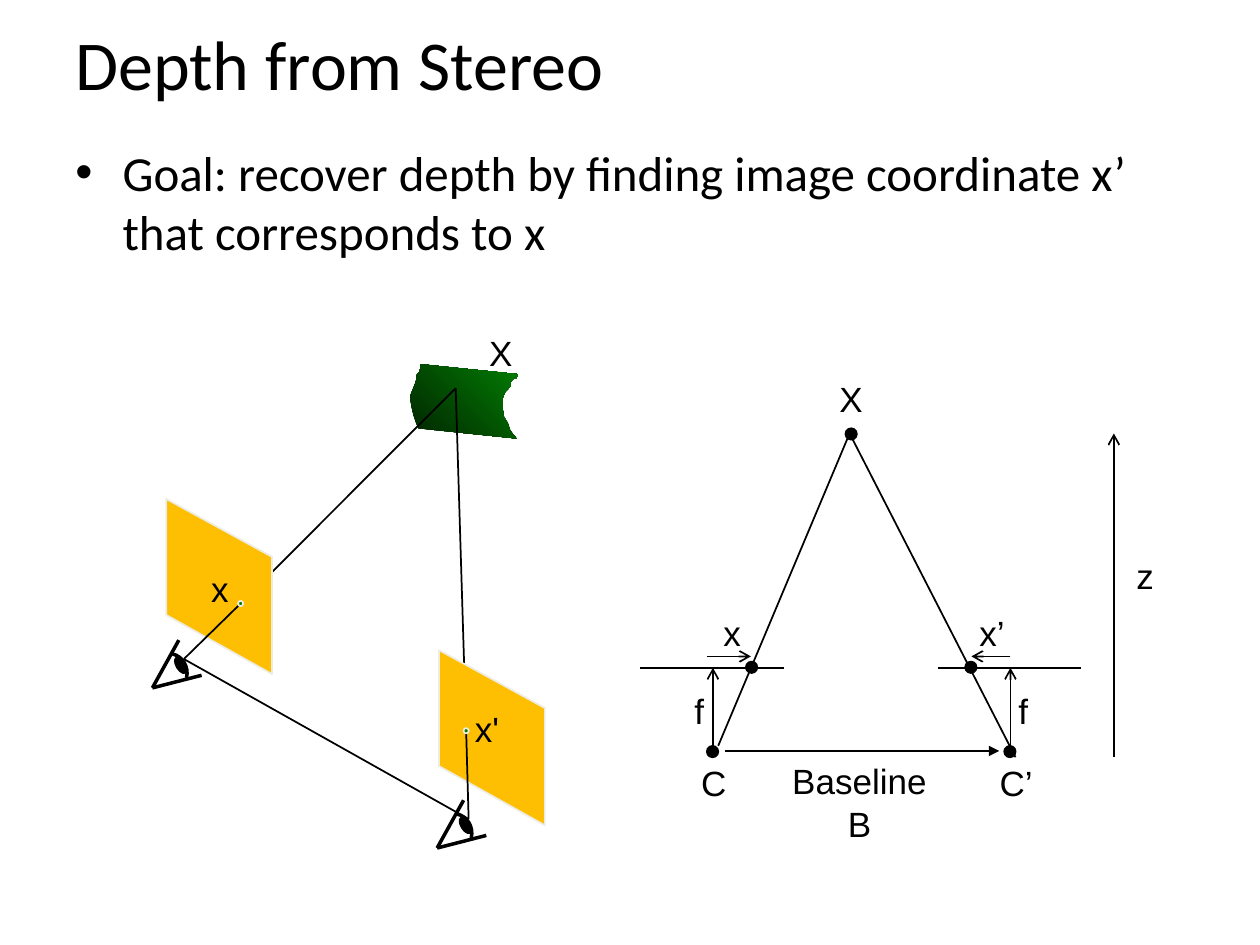
from lxml import etree
from pptx import Presentation
from pptx.dml.color import RGBColor
from pptx.enum.shapes import MSO_CONNECTOR, MSO_SHAPE
from pptx.enum.text import MSO_ANCHOR, PP_ALIGN
from pptx.oxml.ns import qn
from pptx.util import Pt

STRAIGHT = MSO_CONNECTOR.STRAIGHT
OVAL = MSO_SHAPE.OVAL
TOP, MIDDLE = MSO_ANCHOR.TOP, MSO_ANCHOR.MIDDLE
LEFT, CENTER = PP_ALIGN.LEFT, PP_ALIGN.CENTER
BLACK, YELLOW, GREEN, DARK_GREEN, CREAM = "000000", "FEBF02", "037C03", "012501", "EEECE1"


def write(shapes, text, left, top, width, height=31.7, size=20, font="Arial",
          align=CENTER, anchor=MIDDLE, wrap=False, bullet=None):
    box = shapes.add_textbox(Pt(left), Pt(top), Pt(width), Pt(height))
    frame = box.text_frame
    frame.word_wrap = wrap
    frame.vertical_anchor = anchor
    para = frame.paragraphs[0]
    para.text = text
    para.alignment = align
    for span in para.runs:
        span.font.size = Pt(size)
        span.font.name = font
        span.font.color.rgb = RGBColor.from_string(BLACK)
    if bullet:
        settings = para._p.get_or_add_pPr()
        settings.set("marL", str(Pt(27)))
        settings.set("indent", str(Pt(-27)))
        etree.SubElement(settings, qn("a:buFont"), typeface="Arial")
        etree.SubElement(settings, qn("a:buChar"), char=bullet)


def style(shape, fill=None, line=BLACK, width=1, arrow=None):
    if line:
        shape.line.color.rgb = RGBColor.from_string(line)
        shape.line.width = Pt(width)
    else:
        shape.line.fill.background()
    if arrow:
        etree.SubElement(shape.line._ln, qn("a:tailEnd"), type=arrow)
    if fill:
        shape.fill.solid()
        shape.fill.fore_color.rgb = RGBColor.from_string(fill)
    elif hasattr(shape, "fill"):
        shape.fill.background()
    etree.SubElement(shape._element.spPr, qn("a:effectLst"))


deck = Presentation()
deck.slide_width, deck.slide_height = Pt(720), Pt(540)
page = deck.slides.add_slide(deck.slide_layouts[6])

# Title and goal
write(page.shapes, "Depth from Stereo", 36, 0, 648, 72, size=40, font="Calibri",
      align=LEFT, wrap=True)
write(page.shapes, "Goal: recover depth by finding image coordinate x’ that corresponds to x",
      36, 77.8, 648, 404.6, size=28, font="Calibri", align=LEFT, anchor=TOP,
      wrap=True, bullet="•")

# Triangle diagram: lines and arrows
triangle = page.shapes.add_group_shape().shapes
triangle_lines = [
    (410.4, 426.2, 485.5, 247.7, None, 1),
    (580.3, 432.7, 485.5, 247.7, None, 1),
    (403.9, 375.1, 429.1, 375.1, "arrow", 1),
    (577.4, 375.1, 555.1, 375.1, "arrow", 1),
    (636.5, 432.7, 636.5, 247.7, "arrow", 1),
    (414, 429.1, 571, 429.1, "triangle", 1.5),
]
for camera_x in (407.4, 577.4):
    triangle_lines.append((camera_x - 41.6, 381.6, camera_x + 40.4, 381.6, None, 1))
    triangle_lines.append((camera_x, 426.2, camera_x, 381.6, "arrow", 1))
for x1, y1, x2, y2, arrow, width in triangle_lines:
    line = triangle.add_connector(STRAIGHT, Pt(x1), Pt(y1), Pt(x2), Pt(y2))
    style(line, width=width, arrow=arrow)

# Triangle diagram: points
for x, y in [(407.2, 429.5), (577.1, 429.5), (486.4, 248), (429.5, 381.3), (554.8, 381.3)]:
    dot = triangle.add_shape(OVAL, Pt(x - 3.25), Pt(y - 3.25), Pt(6.5), Pt(6.5))
    style(dot, fill=BLACK)

# Triangle diagram: labels
for text, left, top, width in [
    ("X", 454.3, 211.7, 64.1), ("x", 406.1, 345.6, 24.5), ("x’", 552.2, 345.6, 29.5),
    ("f", 389.5, 390.2, 20.2), ("f", 574.6, 390.2, 20.2), ("z", 642.2, 313.2, 24.5),
    ("C", 375.8, 431.3, 64.1), ("C’", 548.6, 431.3, 64.1),
]:
    write(triangle, text, left, top, width)
write(triangle, "Baseline\nB", 445, 430.6, 92.2, 55.4)

# Scene: curved green surface
scene = page.shapes.add_group_shape().shapes
surface_edge = [
    (240.5, 208.1), (239.8, 212.4), (238.3, 213.8), (237.6, 218.2), (236.2, 221.8),
    (234.7, 225.4), (234.7, 229.7), (235.4, 233.3), (236.2, 236.9), (237.6, 241.2),
    (239, 244.8), (295.2, 250.6), (291.6, 246.2), (290.2, 241.9), (288, 238.3),
    (287.3, 234), (287.3, 227.5), (288.7, 223.9), (291.6, 221), (291.6, 218.9),
    (293, 216.7), (295.2, 216), (295.9, 213.8),
]
edge = [(Pt(x), Pt(y)) for x, y in surface_edge]
outline = scene.build_freeform(*edge[0])
outline.add_line_segments(edge[1:])
surface = outline.convert_to_shape()
style(surface, line=None)
surface.fill.gradient()
surface.fill.gradient_angle = 45
for stop, position, color in zip(surface.fill.gradient_stops, (0, 1), (DARK_GREEN, GREEN)):
    stop.position = position
    stop.color.rgb = RGBColor.from_string(color)

# Scene: baseline, then the rays from X, each passing behind its image plane
style(scene.add_connector(STRAIGHT, Pt(105.1), Pt(376.6), Pt(267.8), Pt(468)))
plane_corners = [(95, 351.4), (155.5, 385.2), (155.5, 318.2), (95, 285.1)]
for x, y, shift_x, shift_y in [(137.5, 344.9, 0, 0), (266.4, 417.6, 155.9, 86.4)]:
    style(scene.add_connector(STRAIGHT, Pt(x), Pt(y), Pt(260.4), Pt(221.8)))
    corners = [(Pt(a + shift_x), Pt(b + shift_y)) for a, b in plane_corners]
    outline = scene.build_freeform(*corners[0])
    outline.add_line_segments(corners[1:])
    style(outline.convert_to_shape(), fill=YELLOW, line=CREAM)

# Scene: each eye with its ray to the image point
arc_controls = [(98.6, 373.7), (104.4, 375.1), (108, 380.9), (106.6, 387.4)]
weights = (1, 3, 3, 1)
steps = 8
for x, y, shift_x, shift_y in [(137.5, 344.9, 0, 0), (266.4, 417.6, 162.7, 91.5)]:
    style(scene.add_connector(STRAIGHT, Pt(105.1 + shift_x), Pt(376.6 + shift_y), Pt(x), Pt(y)))
    arc = []
    for step in range(steps + 1):
        t = step / steps
        shares = [w * t ** i * (1 - t) ** (3 - i) for i, w in enumerate(weights)]
        arc.append((Pt(shift_x + sum(s * c[0] for s, c in zip(shares, arc_controls))),
                    Pt(shift_y + sum(s * c[1] for s, c in zip(shares, arc_controls)))))
    outline = scene.build_freeform(*arc[0])
    outline.add_line_segments(arc[1:], close=False)
    style(outline.convert_to_shape(), width=2)
    for lid_x, lid_y in [(102.2, 365.8), (115.2, 385.9)]:
        lid = scene.add_connector(STRAIGHT, Pt(87.1 + shift_x), Pt(393.1 + shift_y),
                                  Pt(lid_x + shift_x), Pt(lid_y + shift_y))
        style(lid, width=2)
    pupil = scene.add_shape(OVAL, Pt(100.8 + shift_x), Pt(375.1 + shift_y), Pt(5), Pt(10.1))
    pupil.rotation = 329
    style(pupil, fill=BLACK)
    image_point = scene.add_shape(OVAL, Pt(x - 1.45), Pt(y - 1.45), Pt(2.9), Pt(2.9))
    style(image_point, fill=GREEN, line=CREAM)

# Scene: labels
for text, left, top in [("X", 262.8, 185.8), ("x", 102.2, 320.4), ("x'", 254.9, 400.3)]:
    write(scene, text, left, top, 46.8)

deck.save("out.pptx")
